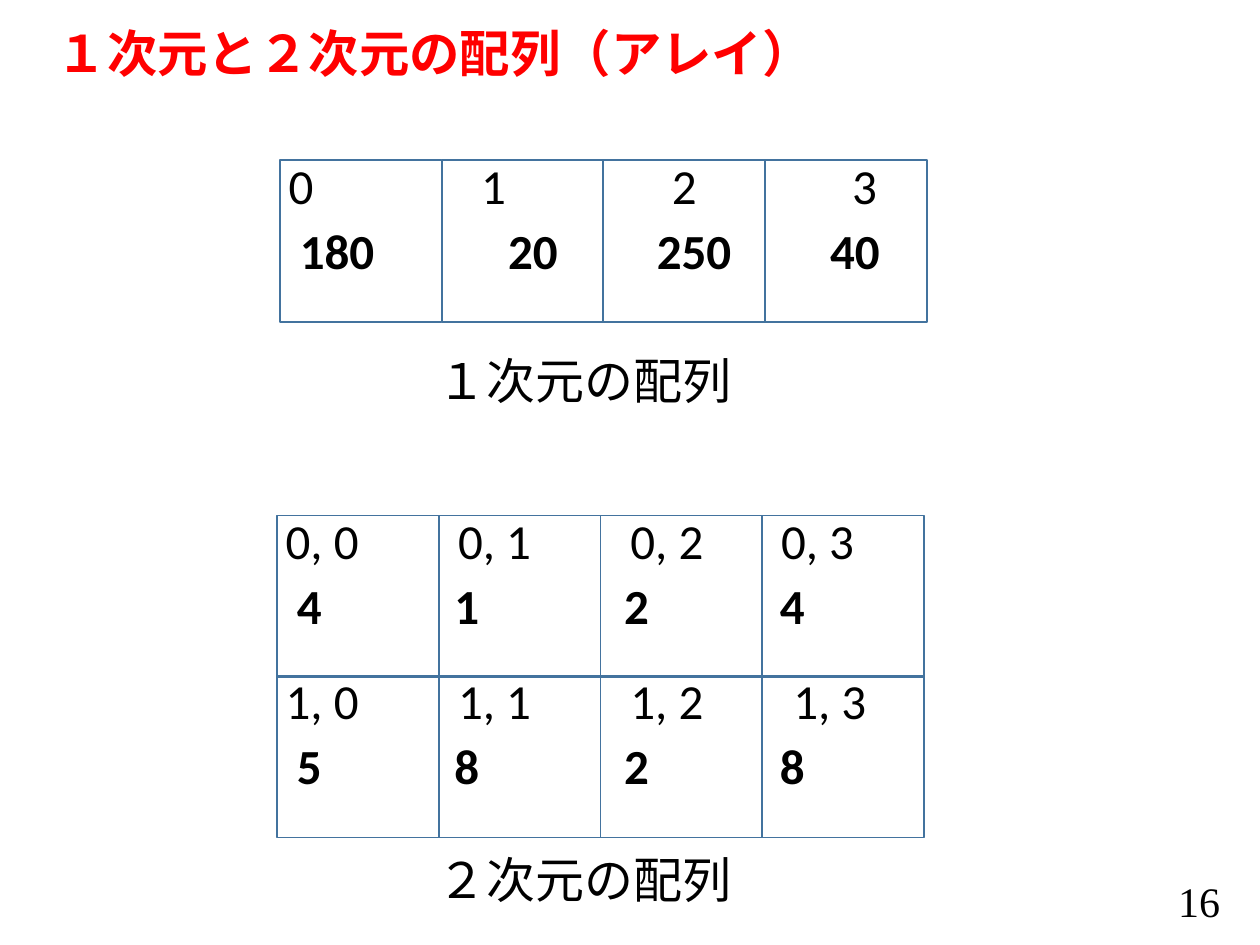
import pptx
import pptx.dml.color
import pptx.enum.shapes
import pptx.enum.text
import pptx.util
from lxml import etree
from pptx.oxml.ns import qn

Pt = pptx.util.Pt
ALIGN = pptx.enum.text.PP_ALIGN
MIDDLE = pptx.enum.text.MSO_ANCHOR.MIDDLE
CELL = 92.4


def rgb(value):
    return pptx.dml.color.RGBColor.from_string(value)


def add_line(left, top, width, height, words, font, size=28, bold=False, tabs=()):
    """Add a one-line text box, with tab stops in points from the text's start."""
    box = slide.shapes.add_textbox(Pt(left), Pt(top), Pt(width), Pt(height))
    box.text_frame.word_wrap = True
    line = box.text_frame.paragraphs[0]
    line.text = words
    if tabs:
        stops = etree.SubElement(line._p.get_or_add_pPr(), qn("a:tabLst"))
        for stop in tabs:
            etree.SubElement(stops, qn("a:tab"), pos=str(Pt(stop)), algn="l")
    line.font.name = font
    line.font.size = Pt(size)
    line.font.bold = bold
    line.font.color.rgb = rgb("000000")
    return box


deck = pptx.Presentation()
deck.slide_width, deck.slide_height = Pt(720), Pt(540)
slide = deck.slides.add_slide(deck.slide_layouts[5])

title = slide.shapes.title
title.left, title.top, title.width, title.height = Pt(25.2), Pt(13.7), Pt(666), Pt(36.7)
title.text_frame.auto_size = pptx.enum.text.MSO_AUTO_SIZE.NONE
title.text_frame.vertical_anchor = MIDDLE
heading = title.text_frame.paragraphs[0]
heading.text = "１次元と２次元の配列（アレイ）"
heading.alignment = ALIGN.LEFT
heading.line_spacing = 0.9
heading.font.name = "Arial"
heading.font.size = Pt(28.8)
heading.font.bold = True
heading.font.color.rgb = rgb("FF0000")

# left, top, indices with their tab stops, values with their tab stops
array_rows = [
    (160, 91.6, ["0", "1", "2", "3"], (110, 219, 322),
     ["180", "20", "250", "40"], (119, 204, 303)),
    (158.4, 294.6, ["0, 0", "0, 1", "0, 2", "0, 3"], (98.5, 197, 283),
     ["4", "1", "2", "4"], (90, 187, 276)),
    (158.4, 386.2, ["1, 0", "1, 1", "1, 2", "1, 3"], (98.5, 197, 290),
     ["5", "8", "2", "8"], (90, 187, 276)),
]
for left, top, indices, index_tabs, values, value_tabs in array_rows:
    for column in range(len(values)):
        cell = slide.shapes.add_shape(
            pptx.enum.shapes.MSO_SHAPE.RECTANGLE,
            Pt(left + column * CELL), Pt(top), Pt(CELL), Pt(CELL))
        cell.shadow.inherit = False
        cell.fill.background()
        cell.line.color.rgb = rgb("43739E")
        cell.line.width = Pt(1)
    add_line(left + 4.2, top + 30.8, 364, 41, "\t".join(values), "Calibri",
             bold=True, tabs=value_tabs)
    add_line(left - 2.2, top - 6.4, 356, 41, "\t".join(indices), "Calibri",
             tabs=index_tabs)

for caption, top in (("１次元の配列", 196.6), ("２次元の配列", 481.7)):
    add_line(243, top, 231, 48, caption, "Arial")

page_number = add_line(542.2, 500.4, 162, 28.8, "16", "Times New Roman", size=24)
page_number.text_frame.vertical_anchor = MIDDLE
page_number.text_frame.paragraphs[0].alignment = ALIGN.RIGHT

deck.save("out.pptx")
